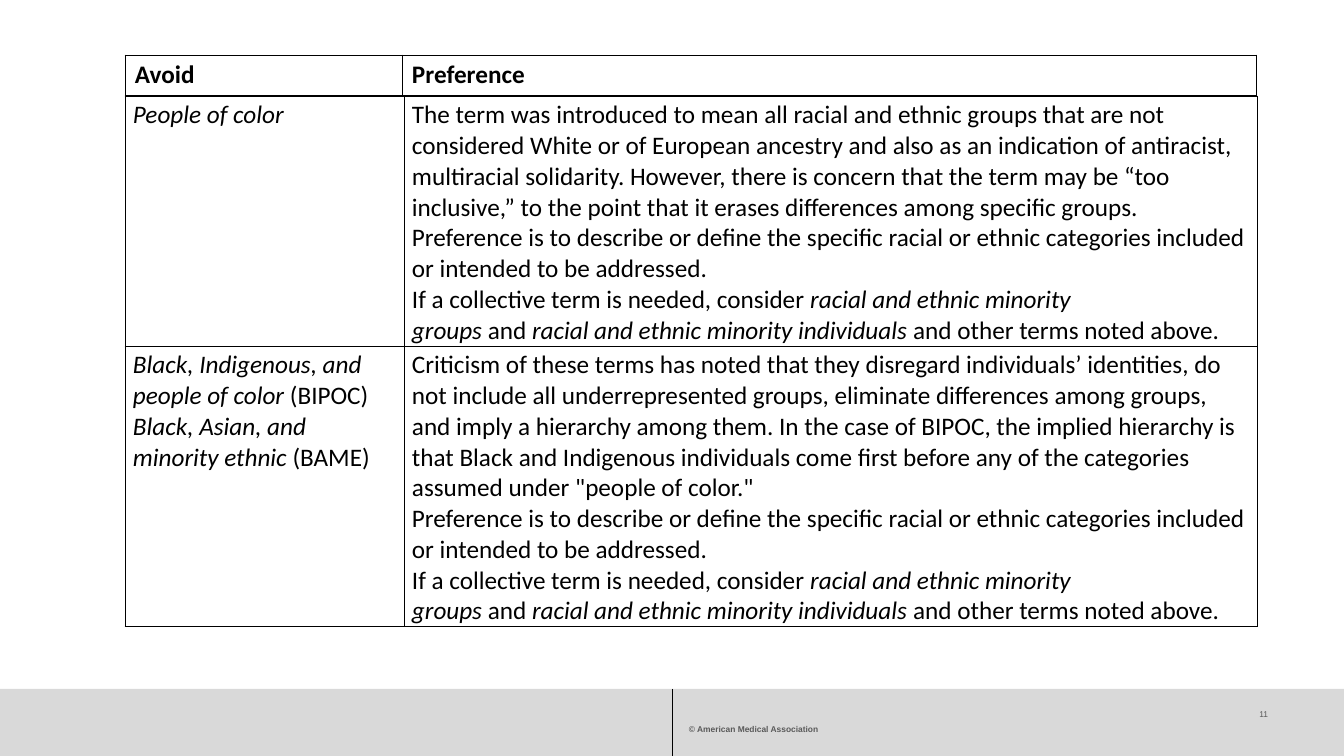
from lxml import etree
from pptx import Presentation
from pptx import util as u
from pptx.dml.color import RGBColor
from pptx.enum import shapes, text
from pptx.oxml import ns, parse_xml

THEME = {
    "ink": RGBColor.from_string("000000"),
    "band": RGBColor.from_string("D9D9D9"),
    "muted": RGBColor.from_string("595959"),
    "table_font": "Calibri",
    "footer_font": "Arial",
    "table_size": u.Pt(18),
    "footer_size": u.Pt(6),
    "border": u.Pt(0.75),
    "divider": u.Pt(0.25),
}
PX = 914400 / 100.8
NBSP = chr(160)  # keeps "groups and racial" on one line


def px(*lengths):
    return [u.Emu(round(length * PX)) for length in lengths]


def add_grid(box, columns, heights, rows, margins, bold=False):
    """Add a ruled table; in its text, *stars* enclose italics."""
    grid = slide.shapes.add_table(len(rows), len(columns), *px(*box)).table
    grid.first_row = grid.horz_banding = False
    for column, width in zip(grid.columns, px(*columns)):
        column.width = width
    for row, height, entries in zip(grid.rows, px(*heights), rows):
        row.height = height
        for cell, entry in zip(row.cells, entries):
            cell.margin_left, cell.margin_top, cell.margin_right, cell.margin_bottom = px(*margins)
            cell.fill.background()
            cell_properties = cell._tc.get_or_add_tcPr()
            for position, side in enumerate("LRTB"):
                cell_properties.insert(position, parse_xml(
                    f'<a:ln{side} {ns.nsdecls("a")} w="{THEME["border"]}"><a:solidFill>'
                    f'<a:srgbClr val="{THEME["ink"]}"/></a:solidFill></a:ln{side}>'))
            cell.text_frame.text = "\n".join(entry)
            for paragraph, marked in zip(cell.text_frame.paragraphs, entry):
                paragraph.text = ""
                for index, words in enumerate(marked.split("*")):
                    if not words:
                        continue
                    run = paragraph.add_run()
                    run.text = words
                    run.font.name = THEME["table_font"]
                    run.font.size = THEME["table_size"]
                    run.font.color.rgb = THEME["ink"]
                    run.font.bold = bold
                    run.font.italic = index % 2 == 1


deck = Presentation()
deck.slide_width, deck.slide_height = px(1344, 756)
slide = deck.slides.add_slide(deck.slide_layouts[6])

# Footer
band = slide.shapes.add_shape(shapes.MSO_SHAPE.RECTANGLE, *px(0, 689, 1344, 67))
band.shadow.inherit = False
band.fill.solid()
band.fill.fore_color.rgb = THEME["band"]
band.line.fill.background()

divider = slide.shapes.add_connector(shapes.MSO_CONNECTOR.STRAIGHT, *px(672, 689, 672, 756))
divider.line.color.rgb = THEME["ink"]
divider.line.width = THEME["divider"]
etree.SubElement(divider._element.spPr, ns.qn("a:effectLst"))

for words, box, align, bold in [
    ("© American Medical Association", (689, 724, 454, 10), text.PP_ALIGN.LEFT, True),
    ("11", (1192, 709, 76, 40), text.PP_ALIGN.RIGHT, False),
]:
    frame = slide.shapes.add_textbox(*px(*box)).text_frame
    frame.word_wrap = True
    frame.margin_left = frame.margin_top = frame.margin_right = frame.margin_bottom = 0
    frame.text = words
    frame.paragraphs[0].alignment = align
    font = frame.paragraphs[0].runs[0].font
    font.name, font.size, font.bold = THEME["footer_font"], THEME["footer_size"], bold
    font.color.rgb = THEME["muted"]

# Terms to avoid and what to prefer
shared_advice = [
    "Preference is to describe or define the specific racial or ethnic categories included "
    "or intended to be addressed.",
    f"If a collective term is needed, consider *racial and ethnic minority groups{NBSP}*and{NBSP}"
    "*racial and ethnic minority individuals* and other terms noted above.",
]
people_of_color = (
    "The term was introduced to mean all racial and ethnic groups that are not considered White "
    "or of European ancestry and also as an indication of antiracist, multiracial solidarity. "
    "However, there is concern that the term may be “too inclusive,” to the point that it erases "
    "differences among specific groups."
)
bipoc_and_bame = (
    "Criticism of these terms has noted that they disregard individuals’ identities, do not "
    "include all underrepresented groups, eliminate differences among groups, and imply a "
    "hierarchy among them. In the case of BIPOC, the implied hierarchy is that Black and "
    "Indigenous individuals come first before any of the categories assumed under "
    "\"people of color.\""
)
terms = [
    [["*People of color*"], [people_of_color, *shared_advice]],
    [["*Black, Indigenous, and people of color* (BIPOC)",
      "*Black, Asian, and minority ethnic* (BAME)"],
     [bipoc_and_bame, *shared_advice]],
]
add_grid((125, 96, 1132, 531), (279, 853), (250, 281), terms, (8, 4, 8, 0))
add_grid((125, 55, 1132, 40), (277, 855), (40,), [[["Avoid"], ["Preference"]]],
         (10, 5, 10, 4), bold=True)

deck.save("out.pptx")
